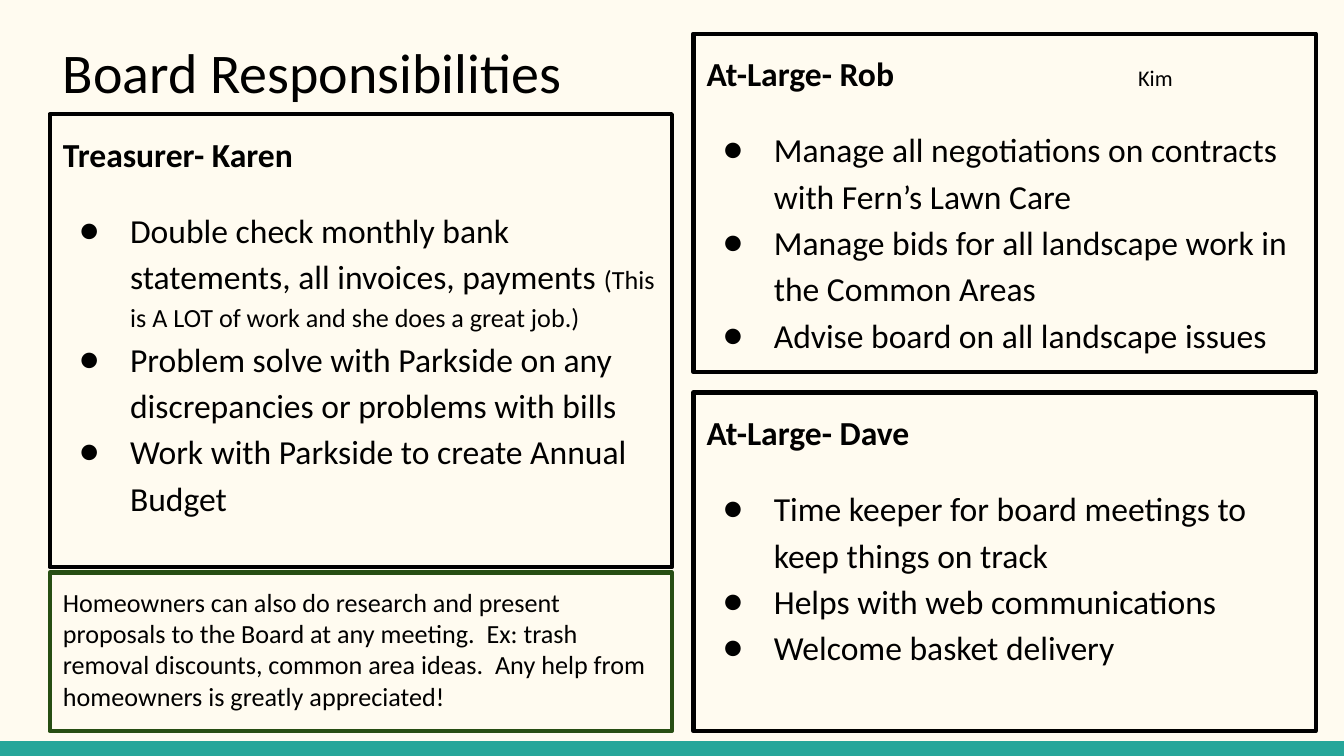
from lxml import etree
from pptx import Presentation
from pptx.dml.color import RGBColor
from pptx.enum.shapes import MSO_SHAPE
from pptx.enum.text import MSO_ANCHOR, PP_ALIGN
from pptx.oxml.ns import qn
from pptx.util import Inches, Pt

RECT, TOP, LEFT = MSO_SHAPE.RECTANGLE, MSO_ANCHOR.TOP, PP_ALIGN.LEFT
CREAM = RGBColor(0xFF, 0xFB, 0xF0)
TEAL = RGBColor(0x26, 0xA6, 0x9A)
GREEN = RGBColor(0x27, 0x4E, 0x13)
BLACK = RGBColor(0, 0, 0)

SLIDE_W = 10
SLIDE_H = SLIDE_W * 9 / 16
BAND_H = 0.11
COL_W, LEFT_X, RIGHT_X = 4.63, 0.37, 5.16
ROLE_H = 2.52
SIDE_TAB = 3.21

# Box (left, top, width, height), heading runs, bullets; a run is (text, size, bold)
ROLES = [
    ((LEFT_X, 0.85, COL_W, 3.37), [("Treasurer- Karen", 18, True)], [
        [("Double check monthly bank statements, all invoices, payments ", 18, False),
         ("(This is A LOT of work and she does a great job.)", 14, False)],
        [("Problem solve with Parkside on any discrepancies or problems with bills", 18, False)],
        [("Work with Parkside to create Annual Budget", 18, False)],
    ]),
    ((RIGHT_X, 0.25, COL_W, ROLE_H), [("At-Large- Rob", 18, True), ("\tKim", 12, False)], [
        [("Manage all negotiations on contracts with Fern’s Lawn Care", 18, False)],
        [("Manage bids for all landscape work in the Common Areas", 18, False)],
        [("Advise board on all landscape issues", 18, False)],
    ]),
    ((RIGHT_X, 2.92, COL_W, ROLE_H), [("At-Large- Dave", 18, True)], [
        [("Time keeper for board meetings to keep things on track", 18, False)],
        [("Helps with web communications", 18, False)],
        [("Welcome basket delivery", 18, False)],
    ]),
]
NOTE = ("Homeowners can also do research and present proposals to the Board at any "
        "meeting.  Ex: trash removal discounts, common area ideas.  Any help from "
        "homeowners is greatly appreciated!")


def add_rect(s, box, fill=None, line=None):
    sp = s.shapes.add_shape(RECT, *map(Inches, box))
    sp.shadow.inherit = False
    if fill is None:
        sp.fill.background()
    else:
        sp.fill.solid()
        sp.fill.fore_color.rgb = fill
    if line is None:
        sp.line.fill.background()
    else:
        sp.line.color.rgb = line
        sp.line.width = Pt(2.25)
    return sp


def prepare_text(sp):
    tf = sp.text_frame
    inset = Inches(0.1)
    settings = {"word_wrap": True, "vertical_anchor": TOP, "margin_left": inset,
                "margin_right": inset, "margin_top": inset, "margin_bottom": inset}
    for name, value in settings.items():
        setattr(tf, name, value)
    return tf


def add_runs(p, runs):
    p.alignment = LEFT
    for text, size, bold in runs:
        r = p.add_run()
        r.text = text
        for name, value in {"name": "Calibri", "size": Pt(size), "bold": bold}.items():
            setattr(r.font, name, value)
        r.font.color.rgb = BLACK


def add_bullet(p):
    pPr = p._p.get_or_add_pPr()
    pPr.set("marL", str(Inches(0.5)))
    pPr.set("indent", str(Inches(-0.38)))
    color = etree.SubElement(pPr, qn("a:buClr"))
    etree.SubElement(color, qn("a:srgbClr"), val=str(BLACK))
    etree.SubElement(pPr, qn("a:buFont"), typeface="Calibri")
    etree.SubElement(pPr, qn("a:buChar"), char="●")


def add_tab(p, position):
    tabs = etree.SubElement(p._p.get_or_add_pPr(), qn("a:tabLst"))
    etree.SubElement(tabs, qn("a:tab"), pos=str(Inches(position)), algn="l")


def add_title(s, box, text):
    tf = prepare_text(s.shapes.add_textbox(*map(Inches, box)))
    add_runs(tf.paragraphs[0], [(text, 30, False)])


def add_role(s, box, heading, bullets):
    tf = prepare_text(add_rect(s, box, line=BLACK))
    p = tf.paragraphs[0]
    p.line_spacing = 1.15
    add_runs(p, heading)
    if len(heading) > 1:
        add_tab(p, SIDE_TAB)
    for i, runs in enumerate(bullets):
        p = tf.add_paragraph()
        p.line_spacing = 1.15
        p.space_before = Pt(0 if i else 16)
        add_runs(p, runs)
        add_bullet(p)


def add_note(s, box, text):
    tf = prepare_text(add_rect(s, box, line=GREEN))
    add_runs(tf.paragraphs[0], [(text, 14, False)])


def main():
    prs = Presentation()
    prs.slide_width, prs.slide_height = Inches(SLIDE_W), Inches(SLIDE_H)
    s = prs.slides.add_slide(prs.slide_layouts[6])
    s.background.fill.solid()
    s.background.fill.fore_color.rgb = CREAM

    # Footer band and title
    add_rect(s, (0, SLIDE_H - BAND_H, SLIDE_W, BAND_H), fill=TEAL)
    add_title(s, (LEFT_X, 0.18, 9.32, 0.67), "Board Responsibilities")

    # Role boxes and homeowner note
    for box, heading, bullets in ROLES:
        add_role(s, box, heading, bullets)
    add_note(s, (LEFT_X, 4.26, COL_W, 1.18), NOTE)
    prs.save("out.pptx")


if __name__ == "__main__":
    main()
